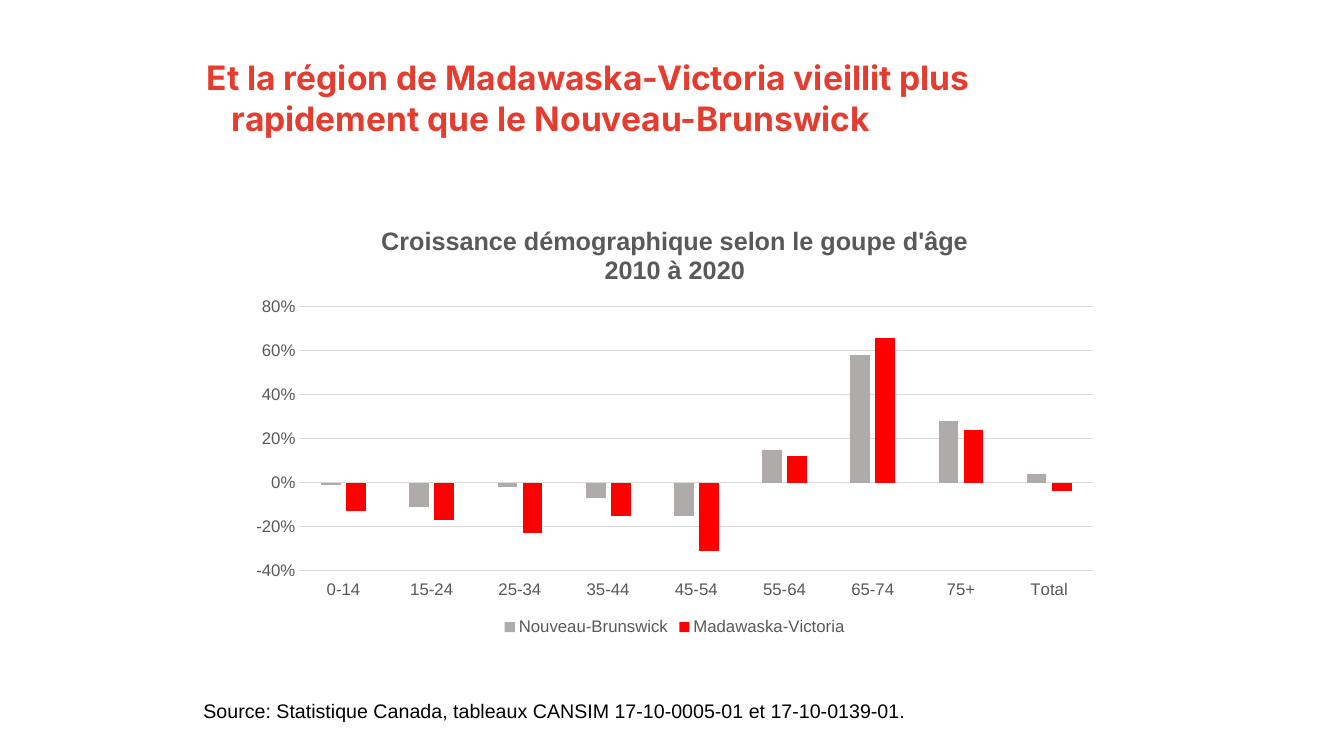
from pptx import Presentation
from pptx import util as u
from pptx.chart import data
from pptx.dml import color
from pptx.enum import chart as charts, text

RED, GREY, PALE = "E43D30", "595959", "D9D9D9"


def rgb(value):
    """Return the colour for a hex string."""
    return color.RGBColor.from_string(value)


def style_font(font, size, name="Arial", fill="000000", bold=False):
    """Apply one format to a font."""
    font.size, font.name, font.bold = u.Pt(size), name, bold
    font.color.rgb = rgb(fill)


def write(paragraph, content, left=0, first=0, **style):
    """Write formatted text into a paragraph, with margins in points."""
    run = paragraph.add_run()
    run.text = content
    style_font(run.font, **style)
    paragraph.alignment = text.PP_ALIGN.LEFT
    properties = paragraph._p.get_or_add_pPr()
    properties.set("marL", str(u.Pt(left)))
    properties.set("indent", str(u.Pt(first)))


class SlideBuilder:
    """Hold the slide and add its elements."""

    def __init__(self, presentation):
        """Add a title-only slide."""
        self.slide = presentation.slides.add_slide(presentation.slide_layouts[5])

    def fill_frame(self, shape, content, **style):
        """Set up a text frame and write its only paragraph."""
        frame = shape.text_frame
        frame.word_wrap = True
        frame.auto_size = text.MSO_AUTO_SIZE.NONE
        frame.vertical_anchor = text.MSO_ANCHOR.TOP
        write(frame.paragraphs[0], content, **style)

    def title(self, content, box, **style):
        """Place and write the title."""
        shape = self.slide.shapes.title
        shape.left, shape.top, shape.width, shape.height = map(u.Pt, box)
        self.fill_frame(shape, content, **style)

    def label(self, content, box, **style):
        """Add a text box."""
        self.fill_frame(self.slide.shapes.add_textbox(*map(u.Pt, box)), content, **style)

    def column_chart(self, heading, categories, series, box):
        """Add a clustered column chart of percentages."""
        chart_data = data.CategoryChartData(number_format="0%")
        chart_data.categories = categories
        for name, (_, values) in series.items():
            chart_data.add_series(name, values)
        chart = self.slide.shapes.add_chart(
            charts.XL_CHART_TYPE.COLUMN_CLUSTERED, *map(u.Pt, box), chart_data).chart
        style_font(chart.font, 10)

        frame = chart.chart_title.text_frame
        frame.text = heading
        for paragraph in frame.paragraphs:
            style_font(paragraph.runs[0].font, 18, fill=GREY, bold=True)
        chart.chart_title.include_in_layout = False

        chart.has_legend = True
        chart.legend.position = charts.XL_LEGEND_POSITION.BOTTOM
        chart.legend.include_in_layout = False
        style_font(chart.legend.font, 12, fill=GREY)

        plot = chart.plots[0]
        plot.gap_width, plot.overlap, plot.vary_by_categories = 219, -27, False
        for column, (fill, _) in zip(plot.series, series.values()):
            column.format.fill.solid()
            column.format.fill.fore_color.rgb = rgb(fill)
            column.invert_if_negative = False

        category_axis, value_axis = chart.category_axis, chart.value_axis
        for axis in (category_axis, value_axis):
            axis.major_tick_mark = axis.minor_tick_mark = charts.XL_TICK_MARK.NONE
            style_font(axis.tick_labels.font, 12, fill=GREY)
        category_axis.tick_label_position = charts.XL_TICK_LABEL_POSITION.LOW
        value_axis.minimum_scale, value_axis.maximum_scale = -0.4, 0.8
        value_axis.major_unit = 0.2
        value_axis.tick_labels.number_format = "0%"
        value_axis.tick_labels.number_format_is_linked = False
        value_axis.format.line.fill.background()
        for line in (category_axis.format.line, value_axis.major_gridlines.format.line):
            line.color.rgb = rgb(PALE)
            line.width = u.Pt(0.75)


def main():
    """Build and save the presentation."""
    presentation = Presentation()
    presentation.slide_width, presentation.slide_height = u.Pt(960), u.Pt(540)
    builder = SlideBuilder(presentation)
    builder.title(
        "Et la région de Madawaska-Victoria vieillit plus rapidement que le Nouveau-Brunswick",
        (122.4, 37.4, 699, 111.6), left=36, first=-18,
        size=24, name="Inter", fill=RED, bold=True)
    builder.label(
        "Source: Statistique Canada, tableaux CANSIM 17-10-0005-01 et 17-10-0139-01.",
        (138.2, 495.4, 674, 24.5), size=14)
    builder.column_chart(
        "Croissance démographique selon le goupe d'âge\n2010 à 2020",
        ["0-14", "15-24", "25-34", "35-44", "45-54", "55-64", "65-74", "75+", "Total"],
        {"Nouveau-Brunswick": (
            "AFABAB", [-0.01, -0.11, -0.02, -0.07, -0.15, 0.15, 0.58, 0.28, 0.04]),
         "Madawaska-Victoria": (
            "FF0000", [-0.13, -0.17, -0.23, -0.15, -0.31, 0.12, 0.66, 0.24, -0.04])},
        (170.6, 149, 622.8, 308.2))
    presentation.save("out.pptx")


if __name__ == "__main__":
    main()
